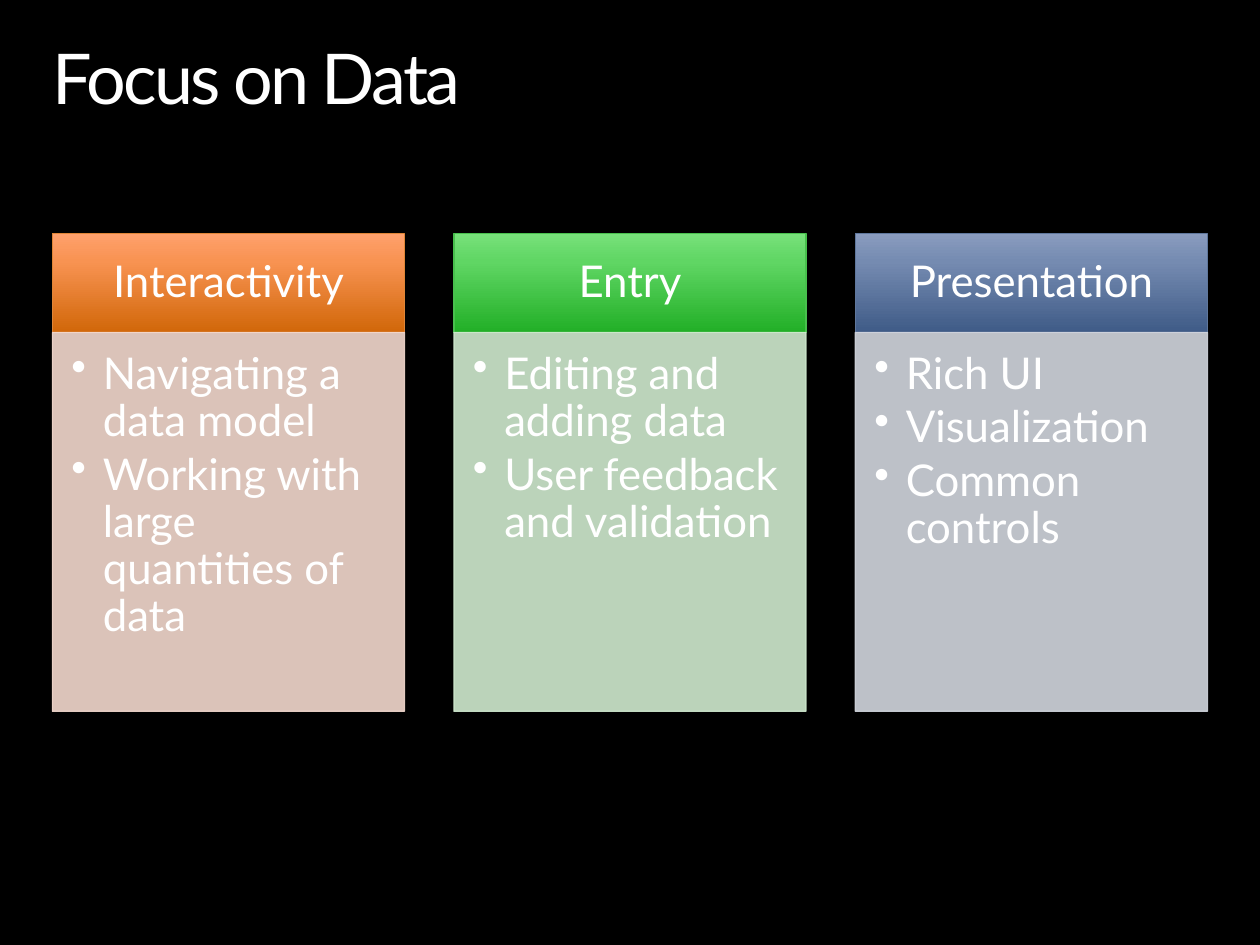
"""Build the Focus on Data slide: three headed columns of bullets."""
import copy

import lxml.etree
import pptx
import pptx.dml.color
import pptx.enum.shapes
import pptx.enum.text
import pptx.oxml.ns
import pptx.util

Pt = pptx.util.Pt
rgb = pptx.dml.color.RGBColor.from_string
qn = pptx.oxml.ns.qn
Align = pptx.enum.text.PP_ALIGN
Anchor = pptx.enum.text.MSO_ANCHOR
Rect = pptx.enum.shapes.MSO_SHAPE.RECTANGLE

hues = {
    "back": "000000",
    "text": "FFFFFF",
    "Interactivity": ("D16709", "F89352", "FFA06C", "DF8536", "F3D9CE"),
    "Entry": ("22AF27", "60D664", "77E17A", "48C04D", "D0EACF"),
    "Presentation": ("3F5B87", "758BB1", "8A9CBF", "5F779C", "D2D6DE"),
}
lists = {
    "Interactivity": ["Navigating a data model", "Working with large quantities of data"],
    "Entry": ["Editing and adding data", "User feedback and validation"],
    "Presentation": ["Rich UI", "Visualization", "Common controls"],
}


def write(shape, lines, size=25, align=Align.LEFT, anchor=Anchor.TOP,
          inset=(0, 0, 0, 0), after=0, bullet=False, track=0):
    frame = shape.text_frame
    frame.word_wrap = True
    frame.vertical_anchor = anchor
    (frame.margin_left, frame.margin_top,
     frame.margin_right, frame.margin_bottom) = map(Pt, inset)
    frame.text = "\n".join(lines)
    for para in frame.paragraphs:
        para.alignment = align
        para.line_spacing = 0.9
        para.space_before = Pt(0)
        para.space_after = Pt(after)
        if bullet:
            props = para._p.get_or_add_pPr()
            props.set("marL", str(Pt(18)))
            props.set("indent", str(-Pt(18)))
            lxml.etree.SubElement(props, qn("a:buChar")).set("char", "•")
        for run in para.runs:
            run.font.name = "Lato"
            run.font.size = Pt(size)
            run.font.color.rgb = rgb(hues["text"])
            if track:
                run.font._element.set("spc", str(track))


def panel(left, top, width, height, edge):
    box = slide.shapes.add_shape(Rect, Pt(left), Pt(top), Pt(width), Pt(height))
    box.shadow.inherit = False
    box.line.color.rgb = rgb(edge)
    box.line.width = Pt(0.75)
    return box


deck = pptx.Presentation()
deck.slide_width, deck.slide_height = Pt(720), Pt(540)
slide = deck.slides.add_slide(deck.slide_layouts[5])
slide.background.fill.solid()
slide.background.fill.fore_color.rgb = rgb(hues["back"])

title = slide.shapes.title
title.left, title.top, title.width, title.height = map(Pt, (30, 25, 660, 44))
write(title, ["Focus on Data"], size=40, track=-150)
title.text_frame.auto_size = pptx.enum.text.MSO_AUTO_SIZE.SHAPE_TO_FIT_TEXT

edge, wide, gap = 30, 201.2, 28.2
top, head, deep = 133.5, 56.5, 216.5

for col, (name, items) in enumerate(lists.items()):
    left = edge + col * (wide + gap)
    *shades, line, pale = hues[name]

    cap = panel(left, top, wide, head, line)
    cap.fill.gradient()
    cap.fill.gradient_angle = 90
    first = cap._element.spPr.find(".//" + qn("a:gs"))
    first.addnext(copy.deepcopy(first))
    for stop, spot, shade in zip(cap.fill.gradient_stops, (0, 0.72, 1), shades):
        stop.position = spot
        stop.color.rgb = rgb(shade)
    write(cap, [name], align=Align.CENTER, anchor=Anchor.MIDDLE,
          inset=(13.5, 8, 13.5, 8))

    body = panel(left, top + head, wide, deep, pale)
    body.fill.solid()
    body.fill.fore_color.rgb = rgb(pale)
    for color in body._element.spPr.iter(qn("a:srgbClr")):
        lxml.etree.SubElement(color, qn("a:alpha")).set("val", "90000")
    write(body, items, inset=(10.8, 10.8, 13.5, 16), after=3.75, bullet=True)

deck.save("out.pptx")
